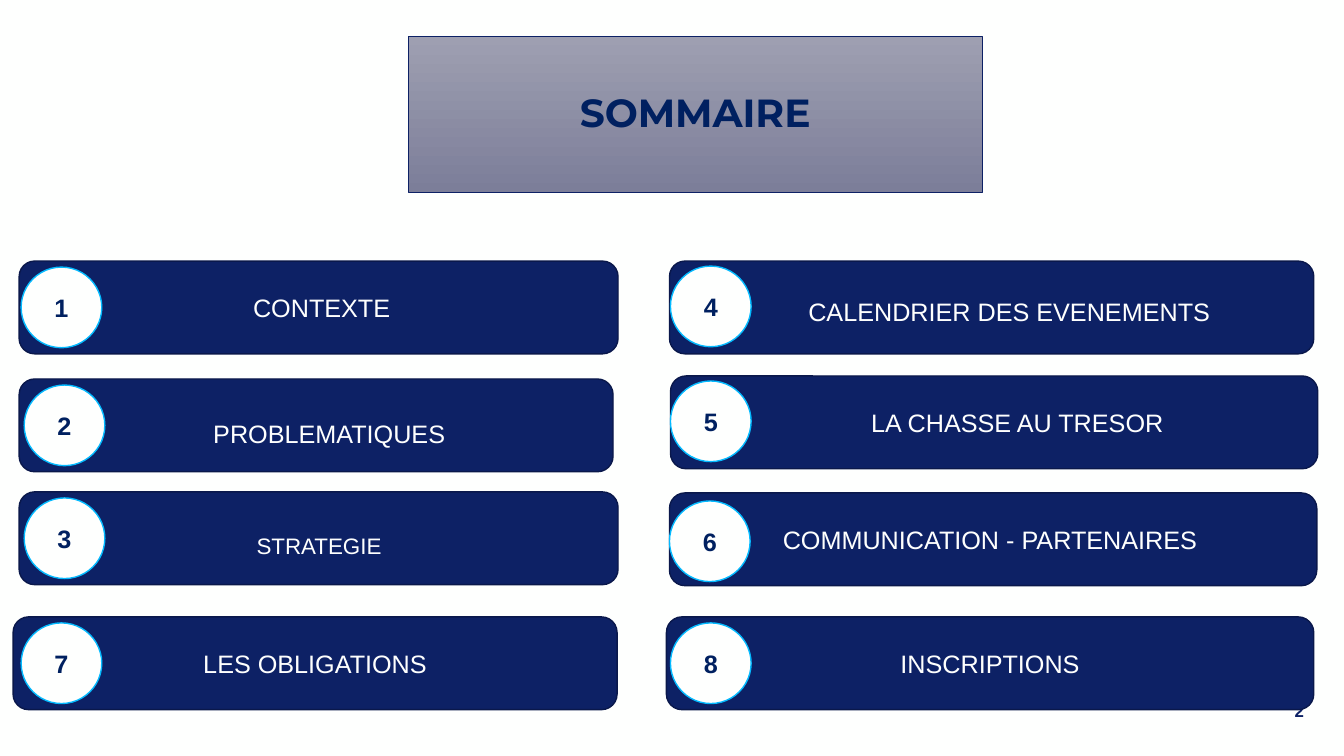
import pptx
import pptx.util
from pptx.dml.color import RGBColor
from pptx.enum.shapes import MSO_SHAPE
from pptx.enum.text import MSO_ANCHOR, PP_ALIGN

PX = 9144  # 100 px to the inch
NAVY, INK, WHITE = "0D2165", "002060", "FEFFFE"
BAR_H, BADGE = 92, 80

# number, label, bar (left, top, width), badge (left, top), format of the label
ENTRIES = [
    ("1", "CONTEXTE", (19, 259, 594), (21, 265), dict(shift=3)),
    ("2", "PROBLEMATIQUES", (19, 376, 589), (24, 382),
     dict(shift=13, spacing=1.5)),
    ("3", "STRATEGIE", (19, 488, 594), (24, 494),
     dict(label_box=(21, 510, 591, 58), size=16, spacing=1.5)),
    ("4", "CALENDRIER DES EVENEMENTS", (664, 259, 639), (665, 264),
     dict(label_box=(704, 274, 594, 58), spacing=1.5)),
    ("5", "LA CHASSE AU TRESOR", (665, 373, 642), (665, 378), dict(shift=23)),
    ("6", "COMMUNICATION - PARTENAIRES", (664, 489, 642), (664, 497),
     dict(shift=-3)),
    ("7", "LES OBLIGATIONS", (13, 612, 599), (21, 618), {}),
    ("8", "INSCRIPTIONS", (661, 612, 642), (665, 618), {}),
]


def emu(*lengths):
    return [pptx.util.Emu(round(n * PX)) for n in lengths]


def rgb(value):
    return RGBColor.from_string(value)


def write(sp, text, size=18, color=WHITE, bold=False, font="Arial", spacing=1,
          align=PP_ALIGN.CENTER, anchor=MSO_ANCHOR.MIDDLE, shift=0):
    """Fill the shape with one line, its centre moved right by shift px."""
    tf = sp.text_frame
    tf.word_wrap = True
    tf.vertical_anchor = anchor
    tf.margin_left, tf.margin_right = emu(10 + max(2 * shift, 0),
                                          10 + max(-2 * shift, 0))
    p = tf.paragraphs[0]
    p.alignment = align
    p.line_spacing = spacing
    r = p.add_run()
    r.text = text
    r.font.name, r.font.size, r.font.bold = font, pptx.util.Pt(size), bold
    r.font.color.rgb = rgb(color)


def add_shape(s, kind, box, fill, line):
    sp = s.shapes.add_shape(kind, *emu(*box))
    sp.shadow.inherit = False
    sp.fill.solid()
    sp.fill.fore_color.rgb = rgb(fill)
    sp.line.color.rgb = rgb(line)
    sp.line.width = pptx.util.Pt(1)
    return sp


def add_title(s, box, text):
    sp = s.shapes.title
    sp.left, sp.top, sp.width, sp.height = emu(*box)
    sp.fill.gradient()
    sp.fill.gradient_angle = 270
    for stop, color in zip(sp.fill.gradient_stops, ("9E9FB1", "7C7E99")):
        stop.color.rgb = rgb(color)
    sp.line.color.rgb = rgb(NAVY)
    sp.line.width = pptx.util.Pt(0.5)
    write(sp, text, size=28, color=INK, bold=True, font="Montserrat",
          spacing=0.9)


def add_page_number(s, box, text):
    write(s.shapes.add_textbox(*emu(*box)), text, size=12, color=NAVY,
          bold=True, align=PP_ALIGN.RIGHT)


def add_entry(s, number, label, bar, badge, label_box=None, **fmt):
    """Draw a bar with its numbered badge; label_box holds a label set apart."""
    sp = add_shape(s, MSO_SHAPE.ROUNDED_RECTANGLE, (*bar, BAR_H), NAVY,
                   "0A184B")
    if label_box:
        sp = s.shapes.add_textbox(*emu(*label_box))
        fmt["anchor"] = MSO_ANCHOR.TOP
    write(sp, label, **fmt)
    circle = add_shape(s, MSO_SHAPE.OVAL, (*badge, BADGE, BADGE), WHITE,
                       "04BAFF")
    write(circle, number, color=INK, bold=True)


def main():
    prs = pptx.Presentation()
    prs.slide_width, prs.slide_height = emu(1333, 750)
    s = prs.slides.add_slide(prs.slide_layouts[5])
    s.background.fill.solid()
    s.background.fill.fore_color.rgb = rgb(WHITE)
    add_title(s, (405, 36, 569, 155), "SOMMAIRE")
    add_page_number(s, (1205, 685, 98, 40), "2")
    for number, label, bar, badge, fmt in ENTRIES:
        add_entry(s, number, label, bar, badge, **fmt)
    prs.save("out.pptx")


if __name__ == "__main__":
    main()
